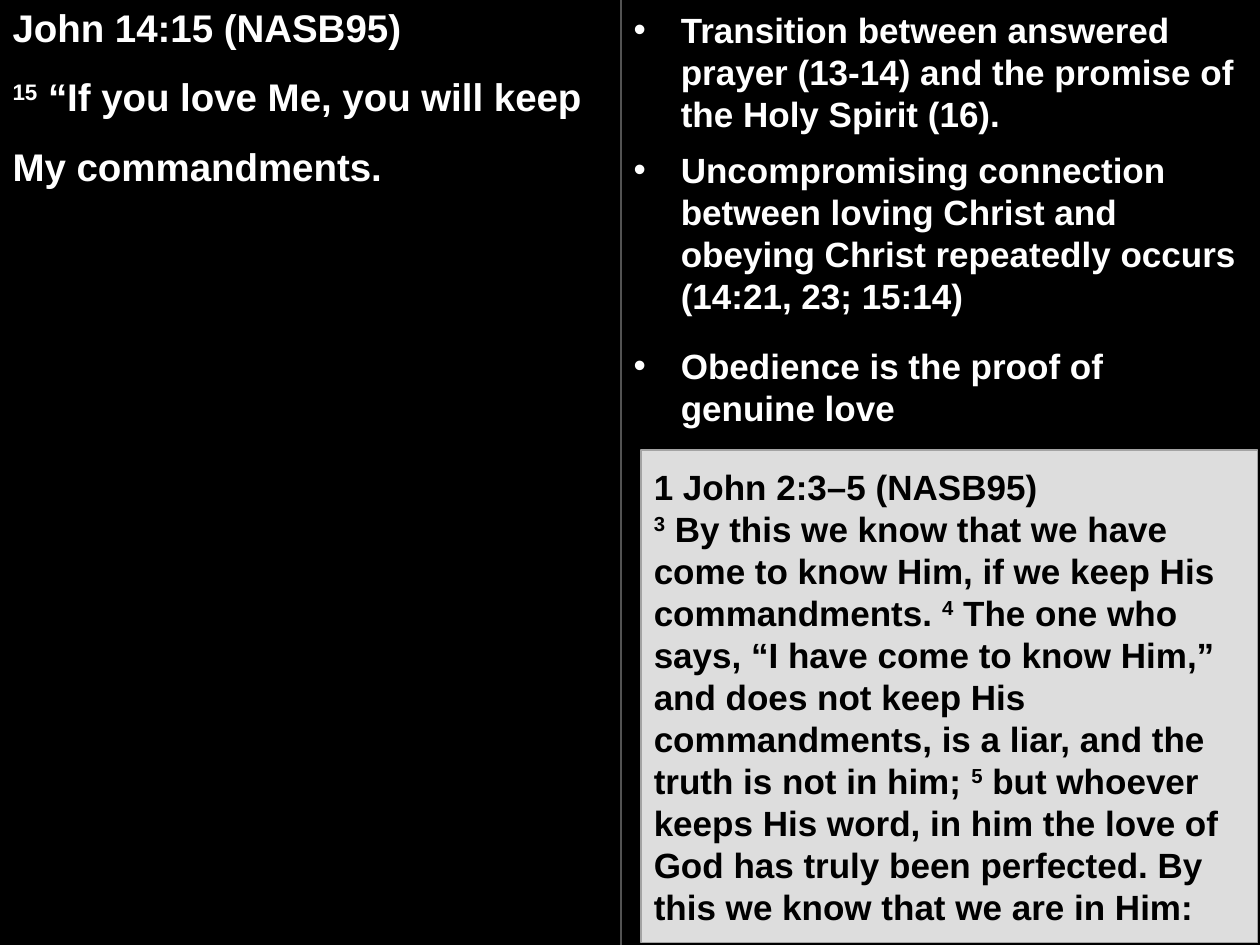
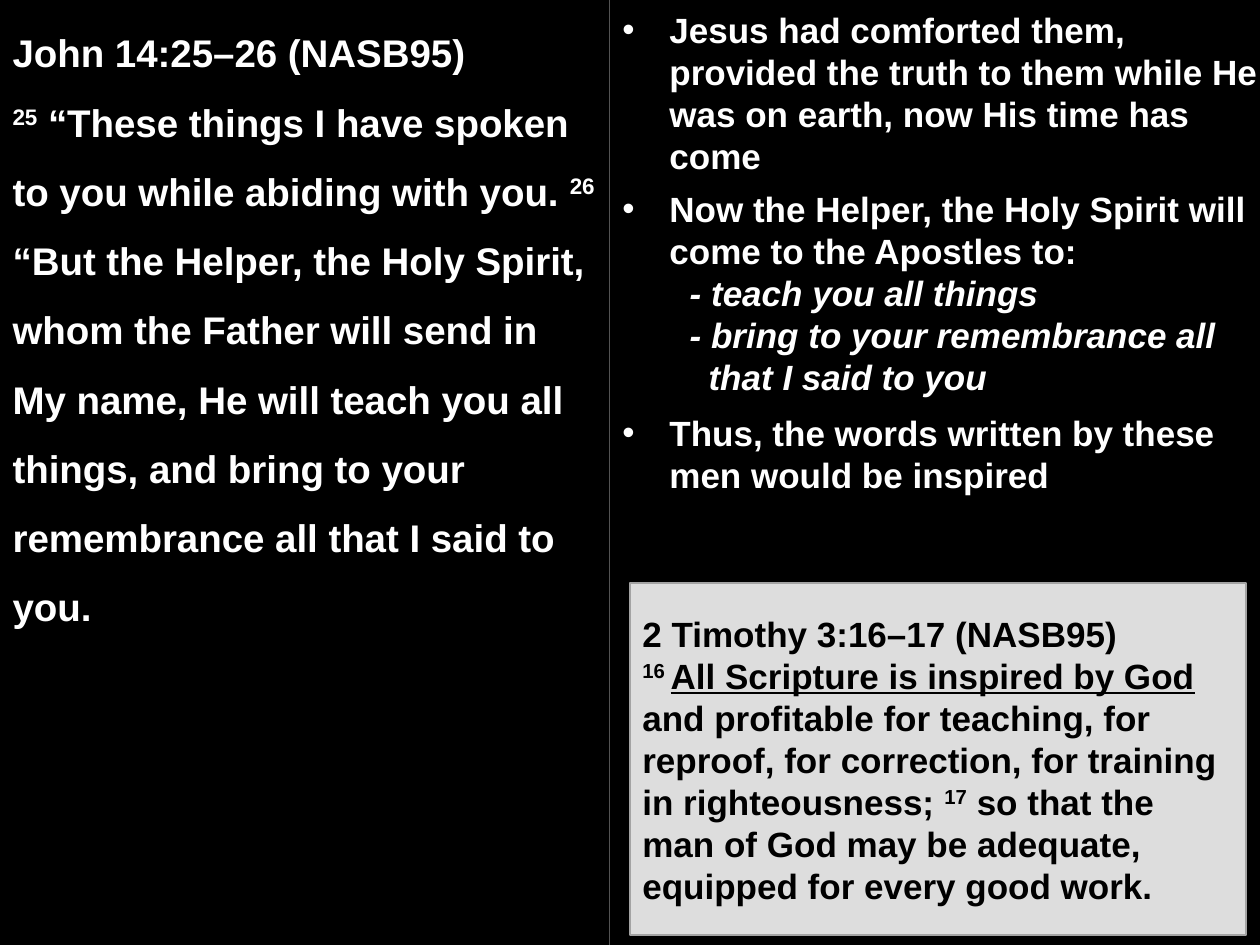
import pptx
import pptx.dml.color
import pptx.enum.shapes
import pptx.enum.text
import pptx.oxml
import pptx.oxml.ns
import pptx.util
from dataclasses import dataclass

Cm, Pt = pptx.util.Cm, pptx.util.Pt
RGB = pptx.dml.color.RGBColor.from_string
ANCHOR = pptx.enum.text.MSO_ANCHOR
RECTANGLE = pptx.enum.shapes.MSO_SHAPE.RECTANGLE


@dataclass(frozen=True)
class Theme:
    font: str = "Arial"
    background: str = "000000"
    text: str = "FFFFFF"
    divider: str = "D8D8D8"
    panel: str = "DDDDDD"
    panel_edge: str = "A3A3A3"
    panel_text: str = "000000"
    passage_size: int = 22
    note_size: int = 20
    veil_opacity: int = 61


THEME = Theme()
PAGE_W, PAGE_H = Cm(25.4), Cm(19.05)
PANEL_GAP, PANEL_W = Cm(0.41), Cm(12.42)
NOTES_TOP = Cm(0.05)

# A run is (text, style); a paragraph is a list of runs.
RUN_STYLES = {
    "plain": {},
    "number": {"baseline": "30000"},
    "underline": {"u": "sng"},
    "italic": {"i": "1"},
}
# Left margin and first-line indent of each note level.
NOTE_INDENTS = {"point": (Cm(0.95), Cm(-0.95)), "detail": (Cm(1.74), Cm(-0.38))}

SLIDES = [
    {
        "divider": Cm(12.52),
        "passage_box": (Cm(0), Cm(-0.51), Cm(12.93), Cm(4.5)),
        "passage": [
            [("John 14:15 (NASB95)", "plain")],
            [("15", "number"),
             (" “If you love Me, you will keep My commandments.", "plain")],
        ],
        "notes_size": (Cm(12.88), Cm(8.74)),
        "notes": [  # level, space before in points, text
            ("point", 0, "Transition between answered prayer (13-14) and the "
                         "promise of the Holy Spirit (16)."),
            ("point", 8, "Uncompromising connection between loving Christ and "
                         "obeying Christ repeatedly occurs (14:21, 23; 15:14)"),
            ("point", 16, "Obedience is the proof of genuine love"),
        ],
        "panel_span": (Cm(9.07), Cm(9.93)),
        "cross_reference": [
            [("1 John 2:3–5 (NASB95)", "plain")],
            [("3", "number"),
             (" By this we know that we have come to know Him, if we keep His "
              "commandments. ", "plain"),
             ("4", "number"),
             (" The one who says, “I have come to know Him,” and does not keep "
              "His commandments, is a liar, and the truth is not in him; ", "plain"),
             ("5", "number"),
             (" but whoever keeps His word, in him the love of God has truly been "
              "perfected. By this we know that we are in Him:", "plain")],
        ],
    },
    {
        "divider": Cm(12.29),
        "passage_box": (Cm(0), Cm(0), Cm(12.29), Cm(12.95)),
        "passage": [
            [("John 14:25–26 (NASB95)", "plain")],
            [("25", "number"),
             (" “These things I have spoken to you while abiding with you. ", "plain"),
             ("26", "number"),
             (" “But the Helper, the Holy Spirit, whom the Father will send in My "
              "name, He will teach you all things, and bring to your remembrance "
              "all that I said to you.", "plain")],
        ],
        "notes_size": (Cm(13.41), Cm(10.08)),
        "notes": [
            ("point", 0, "Jesus had comforted them, provided the truth to them "
                         "while He was on earth, now His time has come"),
            ("point", 6, "Now the Helper, the Holy Spirit will come to the "
                         "Apostles to:"),
            ("detail", 0, "- teach you all things"),
            ("detail", 0, "- bring to your remembrance all that I said to you"),
            ("point", 8, "Thus, the words written by these men would be inspired"),
        ],
        "panel_span": (Cm(11.76), Cm(7.09)),
        "cross_reference": [
            [("2 Timothy 3:16–17 (NASB95)", "plain")],
            [("16 ", "number"),
             ("All Scripture is inspired by God", "underline"),
             (" and profitable for teaching, for reproof, for correction, for "
              "training in righteousness; ", "plain"),
             ("17", "number"),
             (" so that the man of God may be adequate, equipped for every good "
              "work.", "plain")],
        ],
    },
]


def set_all(target, values):
    for name, value in values.items():
        setattr(target, name, value)


def place(shape, left, top, width, height):
    set_all(shape, {"left": left, "top": top, "width": width, "height": height})


def xml_child(parent, tag, **attributes):
    child = pptx.oxml.parse_xml(f"<{tag} {pptx.oxml.ns.nsdecls('a')}/>")
    for name, value in attributes.items():
        child.set(name, value)
    parent.append(child)


def write(frame, paragraphs, size, color, anchor=ANCHOR.TOP, line_spacing=1.0):
    """Fill a text frame with styled runs and return its paragraphs."""
    set_all(frame, {"word_wrap": True, "vertical_anchor": anchor,
                    "auto_size": pptx.enum.text.MSO_AUTO_SIZE.NONE})
    for index, runs in enumerate(paragraphs):
        paragraph = frame.add_paragraph() if index else frame.paragraphs[0]
        set_all(paragraph, {"alignment": pptx.enum.text.PP_ALIGN.LEFT,
                            "line_spacing": line_spacing, "space_before": Pt(0)})
        for text, style in runs:
            run = paragraph.add_run()
            run.text = text
            set_all(run.font, {"name": THEME.font, "size": Pt(size), "bold": True})
            run.font.color.rgb = RGB(color)
            for name, value in RUN_STYLES[style].items():
                run.font._element.set(name, value)
    return frame.paragraphs


def add_rectangle(slide, box, color):
    rectangle = slide.shapes.add_shape(RECTANGLE, *box)
    rectangle.shadow.inherit = False
    rectangle.fill.solid()
    rectangle.fill.fore_color.rgb = RGB(color)
    return rectangle


def add_backdrop(slide, x):
    """Put the column divider, dimmed by a translucent veil, behind the text."""
    divider = slide.shapes.add_connector(
        pptx.enum.shapes.MSO_CONNECTOR.STRAIGHT, x, 0, x, PAGE_H)
    divider.line.color.rgb = RGB(THEME.divider)
    divider.line.width = Pt(0.75)
    xml_child(divider.element.spPr, "a:effectLst")

    veil = add_rectangle(slide, (0, 0, PAGE_W, PAGE_H), THEME.background)
    veil.line.fill.background()
    veil_color = veil.element.spPr.find(".//" + pptx.oxml.ns.qn("a:srgbClr"))
    xml_child(veil_color, "a:alpha", val=str(THEME.veil_opacity * 1000))

    for part in (veil, divider):
        part.element.getparent().insert(2, part.element)


def add_notes_list(slide, notes, box):
    body = slide.placeholders[1]
    place(body, *box)
    runs = [[(text, "italic" if level == "detail" else "plain")]
            for level, _, text in notes]
    paragraphs = write(body.text_frame, runs, THEME.note_size, THEME.text)
    for paragraph, (level, gap, _) in zip(paragraphs, notes):
        paragraph.space_before = Pt(gap)
        properties = paragraph._p.get_or_add_pPr()
        margin, indent = NOTE_INDENTS[level]
        properties.set("marL", str(margin))
        properties.set("indent", str(indent))
        if level == "point":
            xml_child(properties, "a:buChar", char="•")
        else:
            xml_child(properties, "a:buNone")


def add_panel(slide, paragraphs, box):
    panel = add_rectangle(slide, box, THEME.panel)
    panel.line.color.rgb = RGB(THEME.panel_edge)
    panel.line.width = Pt(1)
    write(panel.text_frame, paragraphs, THEME.note_size, THEME.panel_text,
          anchor=ANCHOR.MIDDLE)


def build_slide(deck, content):
    slide = deck.slides.add_slide(deck.slide_layouts[1])
    slide.background.fill.solid()
    slide.background.fill.fore_color.rgb = RGB(THEME.background)
    divider = content["divider"]
    add_backdrop(slide, divider)

    passage = slide.shapes.title
    place(passage, *content["passage_box"])
    write(passage.text_frame, content["passage"], THEME.passage_size, THEME.text,
          line_spacing=1.5)

    add_notes_list(slide, content["notes"],
                   (divider, NOTES_TOP, *content["notes_size"]))
    top, height = content["panel_span"]
    add_panel(slide, content["cross_reference"],
              (divider + PANEL_GAP, top, PANEL_W, height))


def main():
    deck = pptx.Presentation()
    set_all(deck, {"slide_width": PAGE_W, "slide_height": PAGE_H})
    for content in SLIDES:
        build_slide(deck, content)
    deck.save("out.pptx")


if __name__ == "__main__":
    main()
